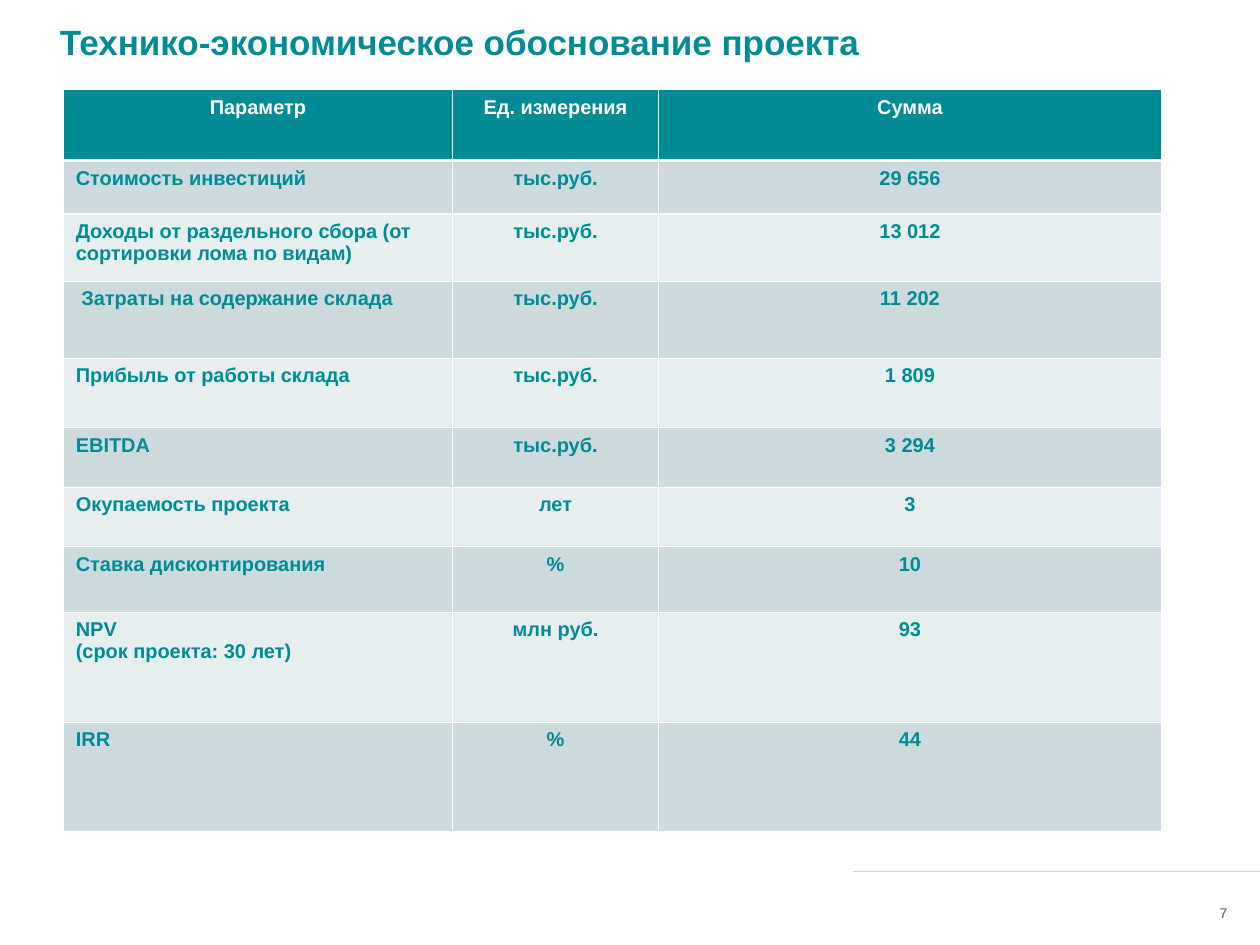
from dataclasses import dataclass

from lxml.etree import SubElement
from pptx import Presentation
from pptx.dml.color import RGBColor
from pptx.enum.shapes import MSO_CONNECTOR as Connector
from pptx.enum.text import MSO_ANCHOR as Anchor, PP_ALIGN as Align
from pptx.oxml import parse_xml
from pptx.oxml.ns import nsdecls, qn
from pptx.util import Cm, Pt


@dataclass(frozen=True)
class Theme:
    """Colours, type sizes and line widths of the slide."""
    font: str = "Arial"
    teal: str = "008C95"
    white: str = "FFFFFF"
    band_dark: str = "CCDADD"
    band_light: str = "E7EEEF"
    rule: str = "C0DADE"
    grey: str = "595959"
    title_size: float = 28
    table_size: float = 16
    number_size: float = 11.2
    grid_width: float = 1
    header_rule_width: float = 3
    footer_rule_width: float = 0.75


THEME = Theme()
COLUMN_WIDTHS = (11, 5.8, 14.2)
ROW_HEIGHTS = (2.01, 1.5, 1.9, 2.18, 1.95, 1.68, 1.68, 1.85, 3.1, 3.1)
ROWS = (
    ("Параметр", "Ед. измерения", "Сумма"),
    ("Стоимость инвестиций", "тыс.руб.", "29 656"),
    ("Доходы от раздельного сбора (от сортировки лома по видам)", "тыс.руб.", "13 012"),
    (" Затраты на содержание склада", "тыс.руб.", "11 202"),
    ("Прибыль от работы склада", "тыс.руб.", "1 809"),
    ("EBITDA", "тыс.руб.", "3 294"),
    ("Окупаемость проекта", "лет", "3"),
    ("Ставка дисконтирования", "%", "10"),
    ("NPV\n(срок проекта: 30 лет)", "млн руб.", "93"),
    ("IRR", "%", "44"),
)


def write(frame, text, size, color, align, bold=False):
    """Fill a text frame and format all of its runs alike."""
    frame.text = text
    for paragraph in frame.paragraphs:
        paragraph.alignment = align
        for run in paragraph.runs:
            run.font.name = THEME.font
            run.font.size = Pt(size)
            run.font.bold = bold
            run.font.color.rgb = RGBColor.from_string(color)


def set_borders(cell, top, bottom):
    """Draw white borders round a cell with the given top and bottom widths."""
    properties = cell._tc.get_or_add_tcPr()
    widths = {"L": THEME.grid_width, "R": THEME.grid_width, "T": top, "B": bottom}
    for position, (side, width) in enumerate(widths.items()):
        properties.insert(position, parse_xml(
            f'<a:ln{side} {nsdecls("a")} w="{Pt(width)}"><a:solidFill>'
            f'<a:srgbClr val="{THEME.white}"/></a:solidFill></a:ln{side}>'))


def add_title(slide, left, top, width, height):
    """Place the slide title on one line in its box."""
    title = slide.shapes.add_textbox(Cm(left), Cm(top), Cm(width), Cm(height))
    frame = title.text_frame
    frame.word_wrap = True
    frame.margin_left = frame.margin_right = Cm(0.1)
    frame.margin_top = frame.margin_bottom = Cm(0.15)
    write(frame, "Технико-экономическое обоснование проекта",
          THEME.title_size, THEME.teal, Align.CENTER, bold=True)


def style_cell(cell, text, row, column):
    """Write one cell and give it the fill and borders of its row."""
    header = row == 0
    cell.margin_left = cell.margin_right = Cm(0.36)
    cell.margin_top = cell.margin_bottom = Cm(0.18)
    align = Align.CENTER if header or column else Align.LEFT
    write(cell.text_frame, text, THEME.table_size,
          THEME.white if header else THEME.teal, align, bold=True)
    band = THEME.band_dark if row % 2 else THEME.band_light
    cell.fill.solid()
    cell.fill.fore_color.rgb = RGBColor.from_string(THEME.teal if header else band)
    set_borders(cell,
                top=THEME.header_rule_width if row == 1 else THEME.grid_width,
                bottom=THEME.header_rule_width if header else THEME.grid_width)


def add_indicators(slide, left, top):
    """Place the table of economic indicators."""
    indicators = slide.shapes.add_table(
        len(ROWS), len(COLUMN_WIDTHS), Cm(left), Cm(top),
        Cm(sum(COLUMN_WIDTHS)), Cm(sum(ROW_HEIGHTS))).table
    for column, width in zip(indicators.columns, COLUMN_WIDTHS):
        column.width = Cm(width)
    for row, height in zip(indicators.rows, ROW_HEIGHTS):
        row.height = Cm(height)
    for row, texts in enumerate(ROWS):
        for column, text in enumerate(texts):
            style_cell(indicators.cell(row, column), text, row, column)


def add_footer(slide, left, top, width, height):
    """Place the footer rule along the top of its box and the page number below."""
    rule = slide.shapes.add_connector(
        Connector.STRAIGHT, Cm(left), Cm(top), Cm(left + width), Cm(top))
    rule.line.color.rgb = RGBColor.from_string(THEME.rule)
    rule.line.width = Pt(THEME.footer_rule_width)
    SubElement(rule._element.spPr, qn("a:effectLst"))

    number_width, right_gap, top_gap = 1.7, 0.92, 0.25
    number = slide.shapes.add_textbox(
        Cm(left + width - right_gap - number_width), Cm(top + top_gap),
        Cm(number_width), Cm(height - top_gap))
    frame = number.text_frame
    frame.word_wrap = True
    frame.vertical_anchor = Anchor.MIDDLE
    frame.margin_left = frame.margin_right = frame.margin_top = frame.margin_bottom = 0
    write(frame, "7", THEME.number_size, THEME.grey, Align.RIGHT)


def main():
    """Build the slide and save it."""
    deck = Presentation()
    deck.slide_width, deck.slide_height = Cm(35.56), Cm(26.67)
    slide = deck.slides.add_slide(deck.slide_layouts[6])
    add_footer(slide, left=24.08, top=24.59, width=11.48, height=2.08)
    add_title(slide, left=1.37, top=0.43, width=23.19, height=2.24)
    add_indicators(slide, left=1.78, top=2.53)
    deck.save("out.pptx")


if __name__ == "__main__":
    main()
